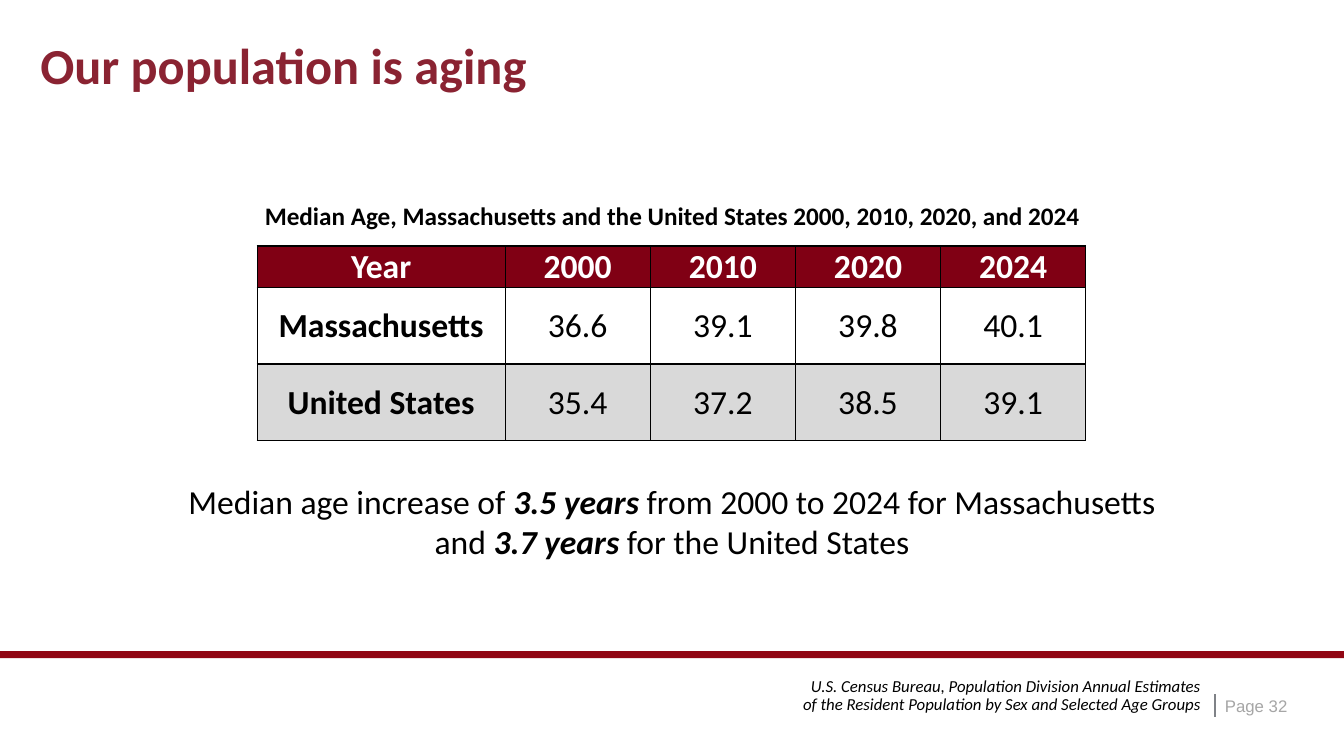
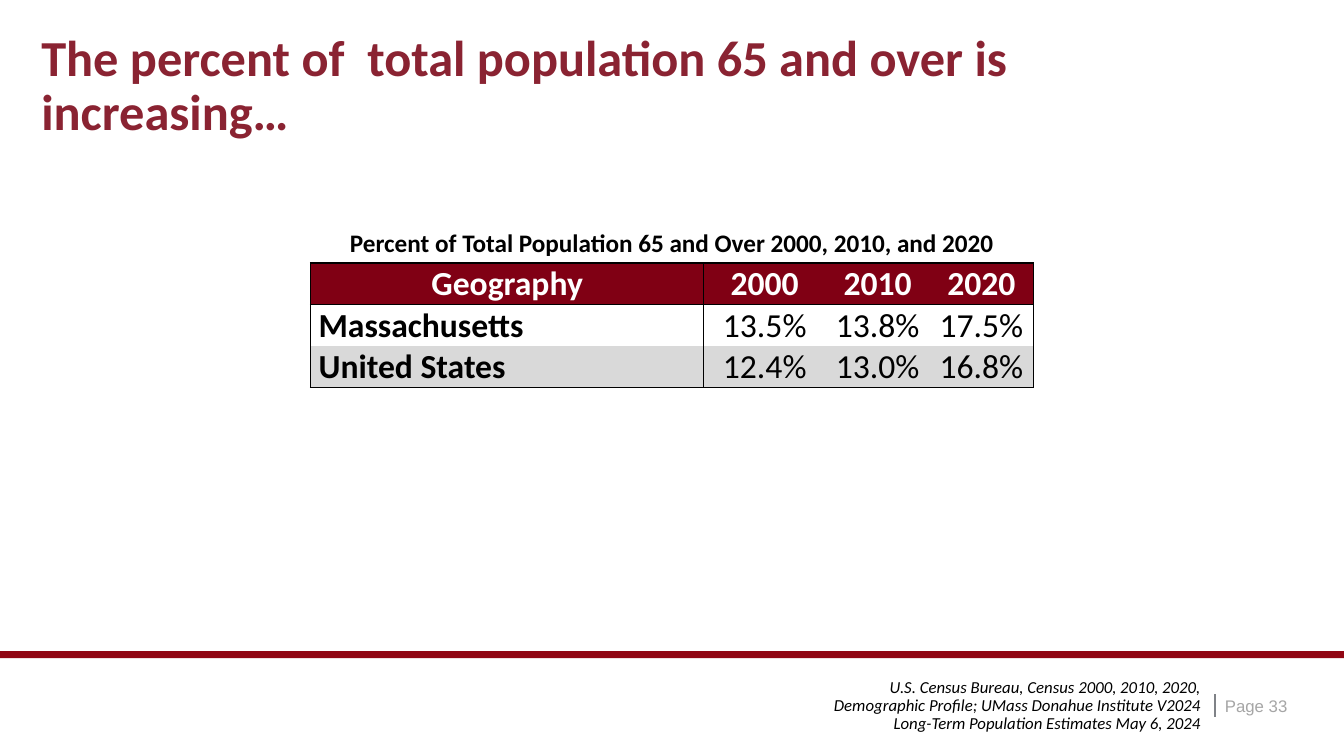
from pptx import Presentation
from pptx.dml.color import RGBColor
from pptx.enum.shapes import MSO_CONNECTOR as Connector, MSO_SHAPE as Shape
from pptx.enum.text import MSO_ANCHOR as Anchor, MSO_AUTO_SIZE as AutoSize, PP_ALIGN as Align
from pptx.oxml import parse_xml
from pptx.oxml.ns import nsdecls
from pptx.util import Inches, Pt

BLACK = RGBColor(0x00, 0x00, 0x00)
WHITE = RGBColor(0xFF, 0xFF, 0xFF)
TITLE_RED = RGBColor(0x8A, 0x23, 0x32)
BAND_RED = RGBColor(0x91, 0x05, 0x13)
HEADER_RED = RGBColor(0x80, 0x00, 0x14)
ROW_GRAY = RGBColor(0xD9, 0xD9, 0xD9)
LINE_GRAY = RGBColor(0x7F, 0x82, 0x87)
PAGE_GRAY = RGBColor(0xA6, 0xA6, 0xA6)
ROW_FILLS = [HEADER_RED, WHITE, ROW_GRAY]

WIDTH, HEIGHT = 13.33, 7.5
BORDER_POINTS = 1


class CensusDeck:
    """Holds the shared style and the slide being built."""

    def __init__(self):
        self.deck = Presentation()
        self.deck.slide_width = Inches(WIDTH)
        self.deck.slide_height = Inches(HEIGHT)
        self.page = None

    def style(self, font, size, color=BLACK, bold=False, italic=False, name="Calibri"):
        font.name, font.size = name, Pt(size)
        font.bold, font.italic = bold, italic
        font.color.rgb = color

    def add_page(self, title, number, left, top):
        self.page = self.deck.slides.add_slide(self.deck.slide_layouts[5])
        self.add_title(title, left, top)
        self.add_footer(number)

    def add_title(self, title, left, top):
        box = self.page.shapes.title
        box.left, box.top = Inches(left), Inches(top)
        box.width, box.height = Inches(11.97), Inches(0.75)
        frame = box.text_frame
        frame.text = title
        frame.auto_size = AutoSize.NONE
        frame.vertical_anchor = Anchor.MIDDLE
        para = frame.paragraphs[0]
        para.alignment, para.line_spacing = Align.LEFT, 0.9
        self.style(para.runs[0].font, 36, TITLE_RED, bold=True)

    def add_footer(self, number):
        # Red band
        band = self.page.shapes.add_shape(
            Shape.RECTANGLE, 0, Inches(6.46), Inches(WIDTH), Inches(0.07))
        band.shadow.inherit = False
        band.fill.solid()
        band.fill.fore_color.rgb = BAND_RED
        band.line.fill.background()
        # Divider and page number
        left = Inches(12.05)
        divider = self.page.shapes.add_connector(
            Connector.STRAIGHT, left, Inches(6.89), left, Inches(7.11))
        divider.line.color.rgb = LINE_GRAY
        divider.line.width = Pt(1.25)
        divider._element.spPr.append(parse_xml(f"<a:effectLst {nsdecls('a')}/>"))
        para = self.add_text(f"Page {number}", 12.05, 6.89, 1.05, 0.22, Align.LEFT, Anchor.MIDDLE)
        self.style(para.runs[0].font, 12, PAGE_GRAY, name="Arial")

    def add_text(self, text, left, top, width, height, align=Align.CENTER, anchor=Anchor.TOP):
        box = self.page.shapes.add_textbox(
            Inches(left), Inches(top), Inches(width), Inches(height))
        frame = box.text_frame
        frame.word_wrap = True
        frame.vertical_anchor = anchor
        frame.text = text
        para = frame.paragraphs[0]
        para.alignment = align
        return para

    def add_caption(self, text, left, top, width):
        para = self.add_text(text, left, top, width, 0.4)
        self.style(para.runs[0].font, 18, bold=True)

    def add_source(self, text, left, top, width, height):
        para = self.add_text(text, left, top, width, height, Align.RIGHT, Anchor.MIDDLE)
        para.line_spacing = 0.9
        self.style(para.runs[0].font, 12, italic=True)

    def add_statement(self, parts, left, top, width, height):
        """Write text parts in which every second one is emphasised."""
        para = self.add_text("", left, top, width, height)
        for index, part in enumerate(parts):
            span = para.add_run()
            span.text = part
            strong = index % 2 == 1
            self.style(span.font, 24, bold=strong, italic=strong)

    def add_table(self, rows, left, top, widths, heights, ruled_columns, ruled_rows,
                  label_align=Align.CENTER):
        """Ruled columns and rows are the numbers of the grid lines to draw."""
        table = self.page.shapes.add_table(
            len(rows), len(widths), Inches(left), Inches(top),
            Inches(sum(widths)), Inches(sum(heights))).table
        table.first_row = table.horz_banding = False
        for column, width in zip(table.columns, widths):
            column.width = Inches(width)
        for row, height in zip(table.rows, heights):
            row.height = Inches(height)
        for r, values in enumerate(rows):
            for c, value in enumerate(values):
                cell = table.cell(r, c)
                is_label = r > 0 and c == 0
                self.fill_cell(cell, value, r, c, label_align if is_label else Align.CENTER)
                self.set_borders(cell, {
                    "L": c in ruled_columns, "R": c + 1 in ruled_columns,
                    "T": r in ruled_rows, "B": r + 1 in ruled_rows})

    def fill_cell(self, cell, value, r, c, align):
        cell.text = value
        cell.vertical_anchor = Anchor.MIDDLE
        cell.margin_left = Inches(0.08 if align == Align.LEFT else 0.01)
        cell.margin_right = cell.margin_top = Inches(0.01)
        cell.margin_bottom = 0
        cell.fill.solid()
        cell.fill.fore_color.rgb = ROW_FILLS[r]
        para = cell.text_frame.paragraphs[0]
        para.alignment = align
        color = WHITE if r == 0 else BLACK
        self.style(para.runs[0].font, 24, color, bold=r == 0 or c == 0)

    def set_borders(self, cell, sides):
        properties = cell._tc.get_or_add_tcPr()
        solid = f'<a:solidFill><a:srgbClr val="{BLACK}"/></a:solidFill>'
        for position, (side, drawn) in enumerate(sides.items()):
            paint = solid if drawn else "<a:noFill/>"
            properties.insert(position, parse_xml(
                f'<a:ln{side} {nsdecls("a")} w="{Pt(BORDER_POINTS)}">{paint}</a:ln{side}>'))


def main():
    census = CensusDeck()

    # Median age
    census.add_page("Our population is aging", 32, 0.3, 0.3)
    census.add_caption(
        "Median Age, Massachusetts and the United States 2000, 2010, 2020, and 2024",
        2.43, 1.94, 8.48)
    census.add_table(
        [["Year", "2000", "2010", "2020", "2024"],
         ["Massachusetts", "36.6", "39.1", "39.8", "40.1"],
         ["United States", "35.4", "37.2", "38.5", "39.1"]],
        2.55, 2.44, [2.46] + [1.44] * 4, [0.41, 0.76, 0.76],
        ruled_columns=range(6), ruled_rows=range(4))
    census.add_statement(
        ["Median age increase of ", "3.5 years ", "from 2000 to 2024 for Massachusetts and ",
         "3.7 years ", "for the United States"],
        1.48, 4.72, 10.37, 0.91)
    census.add_source(
        "U.S. Census Bureau, Population Division Annual Estimates of the Resident "
        "Population by Sex and Selected Age Groups", 7.78, 6.66, 4.23, 0.5)

    # Share of people 65 and over
    census.add_page(
        "The percent of  total population 65 and over is increasing…", 33, 0.31, 0.49)
    census.add_caption(
        "Percent of Total Population 65 and Over 2000, 2010, and 2020", 3.33, 2.21, 6.67)
    census.add_table(
        [["Geography", "2000", "2010", "2020"],
         ["Massachusetts", "13.5%", "13.8%", "17.5%"],
         ["United States", "12.4%", "13.0%", "16.8%"]],
        3.08, 2.61, [3.9, 1.21, 1.03, 1.03], [0.41] * 3,
        ruled_columns=(0, 1, 4), ruled_rows=(0, 1, 3), label_align=Align.LEFT)
    census.add_source(
        "U.S. Census Bureau, Census 2000, 2010, 2020, Demographic Profile; UMass Donahue "
        "Institute V2024 Long-Term Population Estimates May 6, 2024", 7.9, 6.68, 4.11, 0.65)

    census.deck.save("out.pptx")


if __name__ == "__main__":
    main()
